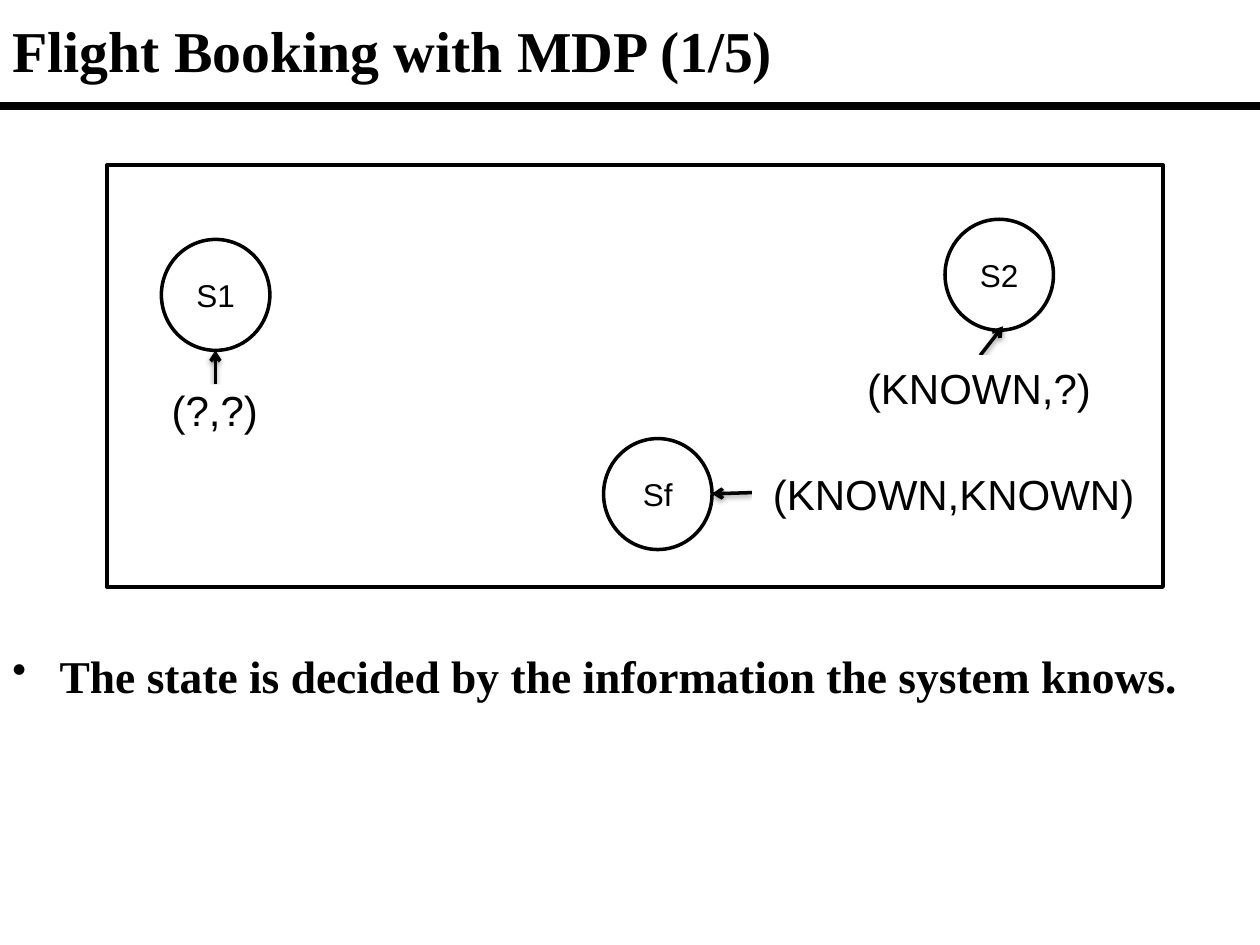
"""Build the flight booking slide with its three dialogue states."""
from dataclasses import dataclass

from lxml.etree import SubElement
from pptx import Presentation
from pptx.dml.color import RGBColor
from pptx.enum.shapes import MSO_CONNECTOR, MSO_SHAPE
from pptx.enum.text import MSO_ANCHOR, PP_ALIGN
from pptx.oxml.ns import qn
from pptx.util import Pt


@dataclass(frozen=True)
class Theme:
    ink: RGBColor = RGBColor(0, 0, 0)
    paper: RGBColor = RGBColor(255, 255, 255)
    serif: str = "Times New Roman"
    sans: str = "Arial"
    title: float = 33
    body: float = 26
    label: float = 24
    state: float = 18
    thin: float = 2
    thick: float = 4.5


@dataclass(frozen=True)
class State:
    name: str
    at: tuple[float, float]
    known: str
    box: tuple[float, float, float, float]
    arrow: tuple[float, float, float, float]


THEME = Theme()
CIRCLE = (62, 63.4)
STATES = (
    State("S1", (92.2, 136.8), "(?,?)", (72.7, 219.6, 100.1, 29.5),
          (123.1, 219.6, 123.1, 200.2)),
    State("Sf", (344.9, 250.6), "(KNOWN,KNOWN)", (429.8, 263.5, 230.4, 36.7),
          (429.8, 281.5, 406.8, 282.2)),
    State("S2", (540, 125.3), "(KNOWN,?)", (478.8, 203, 161.3, 36.7),
          (560.2, 203, 573.1, 186.5)),
)


def set_text(sp, text: str, *, size: float, font: str = THEME.sans, bold: bool = False,
             align=PP_ALIGN.CENTER, anchor=MSO_ANCHOR.MIDDLE, bullet: str = "") -> None:
    tf = sp.text_frame
    tf.word_wrap = True
    tf.vertical_anchor = anchor
    p = tf.paragraphs[0]
    p.alignment = align
    r = p.add_run()
    r.text = text
    r.font.size, r.font.name, r.font.bold = Pt(size), font, bold
    r.font.color.rgb = THEME.ink
    if bullet:
        p.space_before = Pt(size * 0.2)
        pPr = p._p.get_or_add_pPr()
        pPr.set("marL", str(Pt(27)))
        pPr.set("indent", str(-Pt(27)))
        SubElement(pPr, qn("a:buSzPct"), val="90000")
        SubElement(pPr, qn("a:buChar"), char=bullet)


def add_box(s, kind, box: tuple, outlined: bool = True):
    sp = s.shapes.add_shape(kind, *map(Pt, box))
    sp.shadow.inherit = False
    sp.fill.solid()
    sp.fill.fore_color.rgb = THEME.paper
    if outlined:
        sp.line.color.rgb = THEME.ink
        sp.line.width = Pt(THEME.thin)
    else:
        sp.line.fill.background()
    return sp


def add_line(s, ends: tuple, width: float, arrow: bool = False) -> None:
    cxn = s.shapes.add_connector(MSO_CONNECTOR.STRAIGHT, *map(Pt, ends))
    cxn.line.color.rgb = THEME.ink
    cxn.line.width = Pt(width)
    spPr = cxn._element.spPr
    effects = SubElement(spPr, qn("a:effectLst"))
    if arrow:
        SubElement(cxn.line._get_or_add_ln(), qn("a:tailEnd"), type="arrow")
        shadow = SubElement(effects, qn("a:outerShdw"), blurRad=str(Pt(3.1)),
                            dist=str(Pt(1.6)), dir="5400000", rotWithShape="0")
        color = SubElement(shadow, qn("a:srgbClr"), val=str(THEME.ink))
        SubElement(color, qn("a:alpha"), val="38000")


def add_state(s, state: State) -> None:
    circle = add_box(s, MSO_SHAPE.OVAL, state.at + CIRCLE)
    set_text(circle, state.name, size=THEME.state)
    add_line(s, state.arrow, THEME.thin, arrow=True)
    label = add_box(s, MSO_SHAPE.RECTANGLE, state.box, outlined=False)
    set_text(label, state.known, size=THEME.label)


def main() -> None:
    prs = Presentation()
    prs.slide_width, prs.slide_height = Pt(720), Pt(540)
    s = prs.slides.add_slide(prs.slide_layouts[6])
    add_line(s, (0, 60.5, 720, 60.5), THEME.thick)
    add_box(s, MSO_SHAPE.RECTANGLE, (61.2, 94.3, 603.4, 241.2))
    title = s.shapes.add_textbox(Pt(0), Pt(0), Pt(720), Pt(56.9))
    set_text(title, "Flight Booking with MDP (1/5)", size=THEME.title,
             font=THEME.serif, bold=True, align=PP_ALIGN.LEFT)
    body = s.shapes.add_textbox(Pt(0), Pt(366.5), Pt(720), Pt(38.9))
    set_text(body, "The state is decided by the information the system knows.",
             size=THEME.body, font=THEME.serif, bold=True, align=PP_ALIGN.LEFT,
             anchor=MSO_ANCHOR.TOP, bullet="•")
    for state in STATES:
        add_state(s, state)
    prs.save("out.pptx")


if __name__ == "__main__":
    main()
